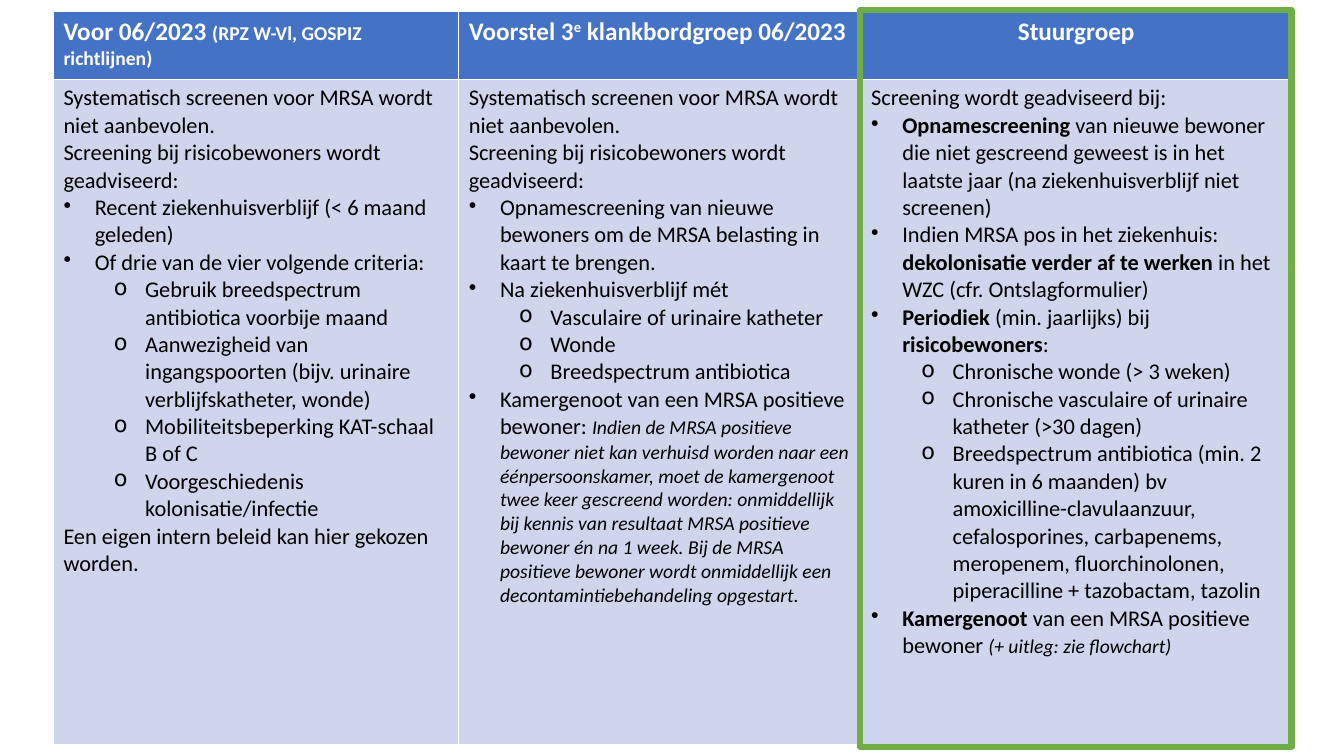
from dataclasses import dataclass
from typing import NamedTuple

from lxml.etree import SubElement as Sub
from pptx import Presentation
from pptx.dml.color import RGBColor as Rgb
from pptx.enum.shapes import MSO_SHAPE as Shape
from pptx.enum.text import PP_ALIGN as Align
from pptx.oxml.ns import qn
from pptx.util import Inches, Pt

# Palette
WHITE, BLACK = "FFFFFF", "000000"
BLUE, PALE, GREEN = "4472C4", "CFD5EA", "70AD47"

# Run formats
BOLD = {"bold": True}
NOTE = {"size": Pt(14), "italic": True}
SMALL = {"size": Pt(14)}


class Piece(NamedTuple):
    text: str
    form: dict = {}
    raised: bool = False


class Kind(NamedTuple):
    level: int = 0
    left: float = 0
    mark: str = ""


PLAIN = Kind()
DOT = Kind(0, 0.31, "•")
RING = Kind(1, 0.81, "o")
HANG = -0.31


@dataclass
class Line:
    kind: Kind
    runs: list[Piece]


@dataclass
class Column:
    width: float
    head: Line
    body: list[Line]
    align: Align = Align.LEFT


def line(kind: Kind, *runs: Piece | str) -> Line:
    return Line(kind, [Piece(r) if isinstance(r, str) else r for r in runs])


def color(code: str) -> Rgb:
    return Rgb.from_string(code)


def write(para, item: Line, base: dict, shade: str) -> None:
    kind = item.kind
    para.level = kind.level
    props = para._p.get_or_add_pPr()
    if kind.mark:
        props.set("marL", str(Inches(kind.left)))
        props.set("indent", str(Inches(HANG)))
        Sub(props, qn("a:buChar")).set("char", kind.mark)
    for piece in item.runs:
        run = para.add_run()
        run.text = piece.text
        for name, value in {**base, **piece.form}.items():
            setattr(run.font, name, value)
        run.font.color.rgb = color(shade)
        if piece.raised:
            run._r.get_or_add_rPr().set("baseline", "30000")


def fill(cell, lines: list[Line], base: dict, shade: str, back: str,
         align: Align = Align.LEFT) -> None:
    cell.fill.solid()
    cell.fill.fore_color.rgb = color(back)
    frame = cell.text_frame
    for num, item in enumerate(lines):
        para = frame.add_paragraph() if num else frame.paragraphs[0]
        write(para, item, base, shade)
        para.alignment = align


# Wording of the three columns
INTRO = [
    line(PLAIN, "Systematisch screenen voor MRSA wordt niet aanbevolen."),
    line(PLAIN, "Screening bij risicobewoners wordt geadviseerd:"),
]
COLUMNS = [
    Column(
        4.02,
        line(PLAIN, "Voor 06/2023 ", Piece("(RPZ W-Vl, GOSPIZ richtlijnen)", SMALL)),
        INTRO + [
            line(DOT, "Recent ziekenhuisverblijf (< 6 maand geleden)"),
            line(DOT, "Of drie van de vier volgende criteria:"),
            line(RING, "Gebruik breedspectrum antibiotica voorbije maand"),
            line(RING, "Aanwezigheid van ingangspoorten (bijv. urinaire "
                       "verblijfskatheter, wonde)"),
            line(RING, "Mobiliteitsbeperking KAT-schaal B of C"),
            line(RING, "Voorgeschiedenis kolonisatie/infectie"),
            line(PLAIN, "Een eigen intern beleid kan hier gekozen worden."),
        ],
    ),
    Column(
        3.99,
        line(PLAIN, "Voorstel 3", Piece("e", raised=True), " klankbordgroep 06/2023"),
        INTRO + [
            line(DOT, "Opnamescreening van nieuwe bewoners om de MRSA belasting "
                      "in kaart te brengen."),
            line(DOT, "Na ziekenhuisverblijf mét"),
            line(RING, "Vasculaire of urinaire katheter"),
            line(RING, "Wonde"),
            line(RING, "Breedspectrum antibiotica"),
            line(DOT, "Kamergenoot van een MRSA positieve bewoner: ", Piece(
                "Indien de MRSA positieve bewoner niet kan verhuisd worden naar "
                "een éénpersoonskamer, moet de kamergenoot twee keer gescreend "
                "worden: onmiddellijk bij kennis van resultaat MRSA positieve "
                "bewoner én na 1 week. Bij de MRSA positieve bewoner wordt "
                "onmiddellijk een decontamintiebehandeling opgestart.", NOTE)),
        ],
    ),
    Column(
        4.27,
        line(PLAIN, "Stuurgroep"),
        [
            line(PLAIN, "Screening wordt geadviseerd bij:"),
            line(DOT, Piece("Opnamescreening", BOLD),
                 " van nieuwe bewoner die niet gescreend geweest is in het laatste "
                 "jaar (na ziekenhuisverblijf niet screenen)"),
            line(DOT, "Indien MRSA pos in het ziekenhuis: ",
                 Piece("dekolonisatie verder af te werken ", BOLD),
                 "in het WZC (cfr. Ontslagformulier)"),
            line(DOT, Piece("Periodiek", BOLD), " (min. jaarlijks) bij ",
                 Piece("risicobewoners", BOLD), ":"),
            line(RING, "Chronische wonde (> 3 weken)"),
            line(RING, "Chronische vasculaire of urinaire katheter (>30 dagen)"),
            line(RING, "Breedspectrum antibiotica (min. 2 kuren in 6 maanden) bv "
                       "amoxicilline-clavulaanzuur, cefalosporines, carbapenems, "
                       "meropenem, fluorchinolonen, piperacilline + tazobactam, "
                       "tazolin"),
            line(DOT, Piece("Kamergenoot", BOLD), " van een MRSA positieve bewoner ",
                 Piece("(+ uitleg: zie flowchart)", NOTE)),
        ],
        Align.CENTER,
    ),
]
HEAD = {"name": "Calibri", "size": Pt(18), "bold": True}
BODY = {"name": "Calibri", "size": Pt(16), "bold": False}
ROWS = [0.68, 6.6]


def main() -> None:
    deck = Presentation()
    deck.slide_width, deck.slide_height = Inches(13.33), Inches(7.5)
    slide = deck.slides.add_slide(deck.slide_layouts[6])

    # Comparison table; its default style draws the white borders
    width = sum(col.width for col in COLUMNS)
    table = slide.shapes.add_table(
        len(ROWS), len(COLUMNS), Inches(0.53), Inches(0.11),
        Inches(width), Inches(sum(ROWS))).table
    table.horz_banding = False
    for row, high in zip(table.rows, ROWS):
        row.height = Inches(high)
    for num, col in enumerate(COLUMNS):
        table.columns[num].width = Inches(col.width)
        fill(table.cell(0, num), [col.head], HEAD, WHITE, BLUE, col.align)
        fill(table.cell(1, num), col.body, BODY, BLACK, PALE)

    # Green frame around the last column
    frame = slide.shapes.add_shape(
        Shape.RECTANGLE, Inches(8.53), Inches(0.1), Inches(4.28), Inches(7.31))
    frame.shadow.inherit = False
    frame.fill.background()
    frame.line.color.rgb = color(GREEN)
    frame.line.width = Pt(4.5)

    deck.save("out.pptx")


if __name__ == "__main__":
    main()
